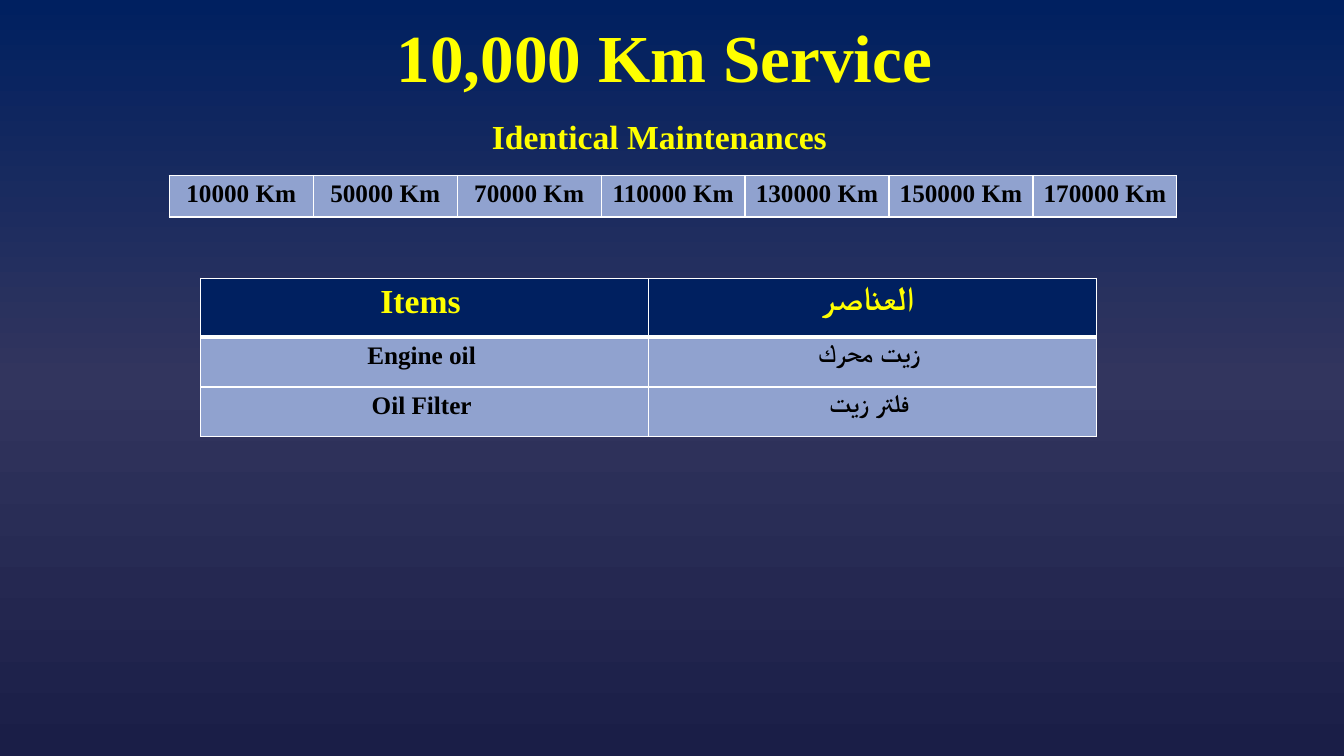
from copy import deepcopy
from dataclasses import dataclass

from lxml import etree
from pptx import Presentation
from pptx.dml.color import RGBColor
from pptx.enum.text import MSO_ANCHOR, PP_ALIGN
from pptx.oxml.ns import qn
from pptx.slide import Slide
from pptx.table import _Cell
from pptx.text.text import _Paragraph
from pptx.util import Inches, Length, Pt

CENTER = PP_ALIGN.CENTER
MIDDLE = MSO_ANCHOR.MIDDLE
TOP = MSO_ANCHOR.TOP
WIDTH = Inches(13.33)
HEIGHT = Inches(7.5)


@dataclass(frozen=True)
class Theme:
    font: str = "Times New Roman"
    accent: str = "FFFF00"
    ink: str = "000000"
    header: str = "002060"
    body: str = "90A2CF"
    border: str = "FFFFFF"
    backdrop: tuple[str, ...] = ("002060", "32355E", "1A1E47")
    title_size: int = 48
    heading_size: int = 24
    body_size: int = 18
    thin: int = 1
    thick: int = 3


THEME = Theme()


@dataclass(frozen=True)
class Heading:
    text: str
    left: float
    top: float
    width: float
    height: float
    size: int
    anchor: MSO_ANCHOR
    line_spacing: float


@dataclass(frozen=True)
class Grid:
    left: float
    top: float
    column_width: float
    row_heights: tuple[float, ...]
    rows: tuple[tuple[str, ...], ...]
    has_header: bool


HEADINGS = (
    Heading("10,000 Km Service", 6.3, 1.33, 86.27, 13.33, THEME.title_size, MIDDLE, 0.9),
    Heading("Identical Maintenances", 28.58, 14.67, 40.96, 6.67, THEME.heading_size, TOP, 1.0),
)

GRIDS = (
    Grid(12.6, 23.2, 10.71, (5.5,), ((
        "10000 Km", "50000 Km", "70000 Km", "110000 Km ",
        "130000 Km ", "150000 Km", "170000 Km",
    ),), False),
    Grid(14.93, 36.8, 33.34, (7.8, 6.6, 6.6), (
        ("Items ", "العناصر "),
        ("Engine oil ", "زيت محرك "),
        ("Oil Filter ", "فلتر زيت "),
    ), True),
)


def across(percent: float) -> Length:
    return Length(round(WIDTH * percent / 100))


def down(percent: float) -> Length:
    return Length(round(HEIGHT * percent / 100))


def style_paragraph(para: _Paragraph, size: int, color: str) -> None:
    para.alignment = CENTER
    para.font.name = THEME.font
    para.font.size = Pt(size)
    para.font.bold = True
    para.font.color.rgb = RGBColor.from_string(color)


def paint_background(page: Slide) -> None:
    fill = page.background.fill
    fill.gradient()
    fill.gradient_angle = 270
    stops = page.element.find(".//" + qn("a:gsLst"))
    stops.append(deepcopy(stops[0]))
    last = len(THEME.backdrop) - 1
    for index, (stop, color) in enumerate(zip(fill.gradient_stops, THEME.backdrop)):
        stop.position = index / last
        stop.color.rgb = RGBColor.from_string(color)


def draw_heading(page: Slide, heading: Heading) -> None:
    box = page.shapes.add_textbox(
        across(heading.left), down(heading.top), across(heading.width), down(heading.height)
    )
    frame = box.text_frame
    frame.word_wrap = True
    frame.vertical_anchor = heading.anchor
    para = frame.paragraphs[0]
    para.text = heading.text
    para.line_spacing = heading.line_spacing
    style_paragraph(para, heading.size, THEME.accent)


def draw_borders(cell: _Cell, top: int, bottom: int) -> None:
    properties = cell._tc.get_or_add_tcPr()
    widths = {"lnL": THEME.thin, "lnR": THEME.thin, "lnT": top, "lnB": bottom}
    for side, width in widths.items():
        line = etree.SubElement(properties, qn(f"a:{side}"), w=str(Pt(width)))
        solid = etree.SubElement(line, qn("a:solidFill"))
        etree.SubElement(solid, qn("a:srgbClr"), val=THEME.border)


def draw_grid(page: Slide, grid: Grid) -> None:
    columns = len(grid.rows[0])
    table = page.shapes.add_table(
        len(grid.rows), columns, across(grid.left), down(grid.top),
        across(grid.column_width * columns), down(sum(grid.row_heights)),
    ).table
    table.first_row = grid.has_header
    table.horz_banding = False
    for column in table.columns:
        column.width = across(grid.column_width)
    for index, (height, texts) in enumerate(zip(grid.row_heights, grid.rows)):
        table.rows[index].height = down(height)
        is_header = grid.has_header and index == 0
        below_header = grid.has_header and index == 1
        for column_index, text in enumerate(texts):
            cell = table.cell(index, column_index)
            draw_borders(
                cell,
                THEME.thick if below_header else THEME.thin,
                THEME.thick if is_header else THEME.thin,
            )
            cell.fill.solid()
            cell.fill.fore_color.rgb = RGBColor.from_string(
                THEME.header if is_header else THEME.body
            )
            para = cell.text_frame.paragraphs[0]
            para.text = text
            style_paragraph(
                para,
                THEME.heading_size if is_header else THEME.body_size,
                THEME.accent if is_header else THEME.ink,
            )


def main() -> None:
    deck = Presentation()
    deck.slide_width = WIDTH
    deck.slide_height = HEIGHT
    page = deck.slides.add_slide(deck.slide_layouts[6])
    paint_background(page)
    for heading in HEADINGS:
        draw_heading(page, heading)
    for grid in GRIDS:
        draw_grid(page, grid)
    deck.save("out.pptx")


if __name__ == "__main__":
    main()
